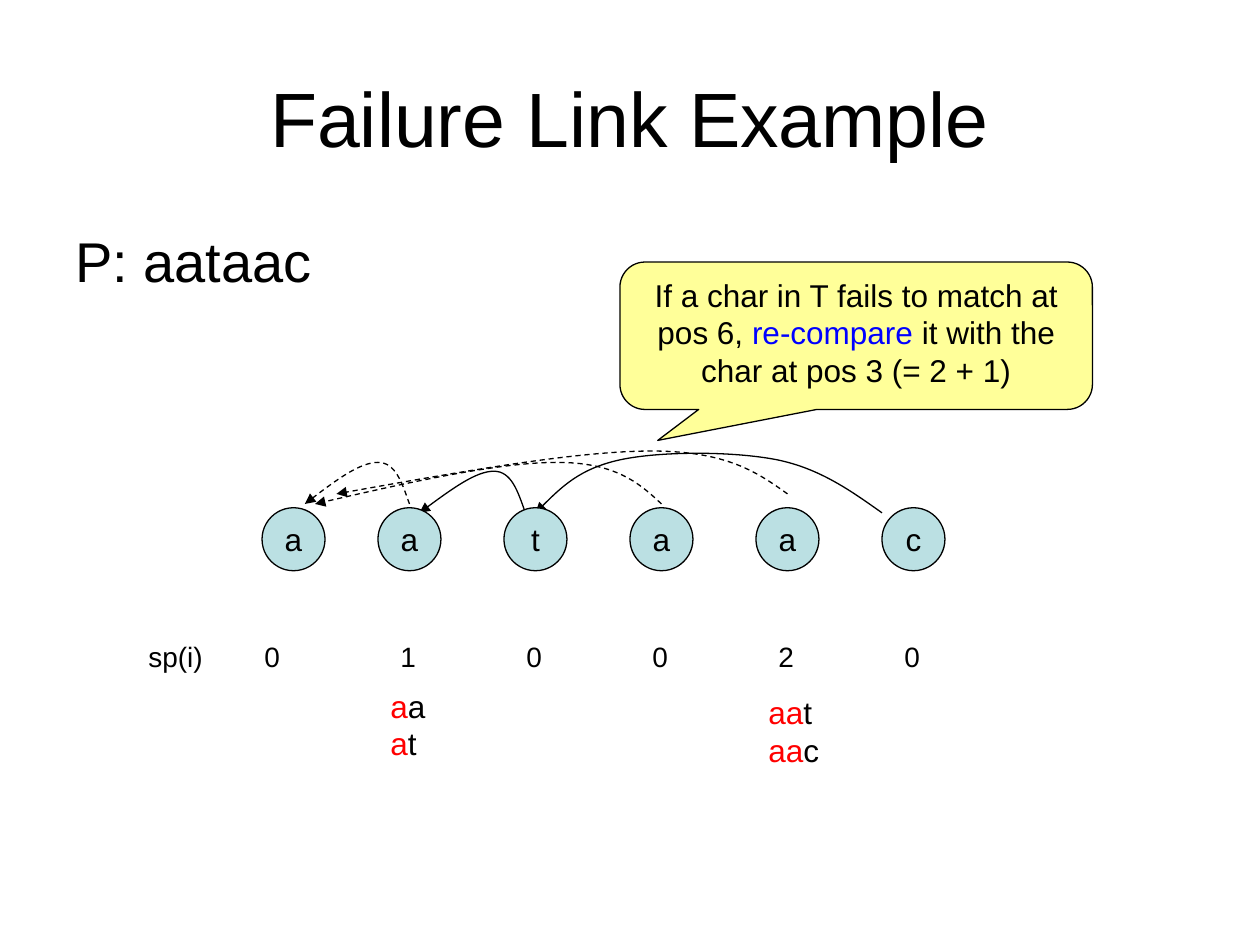
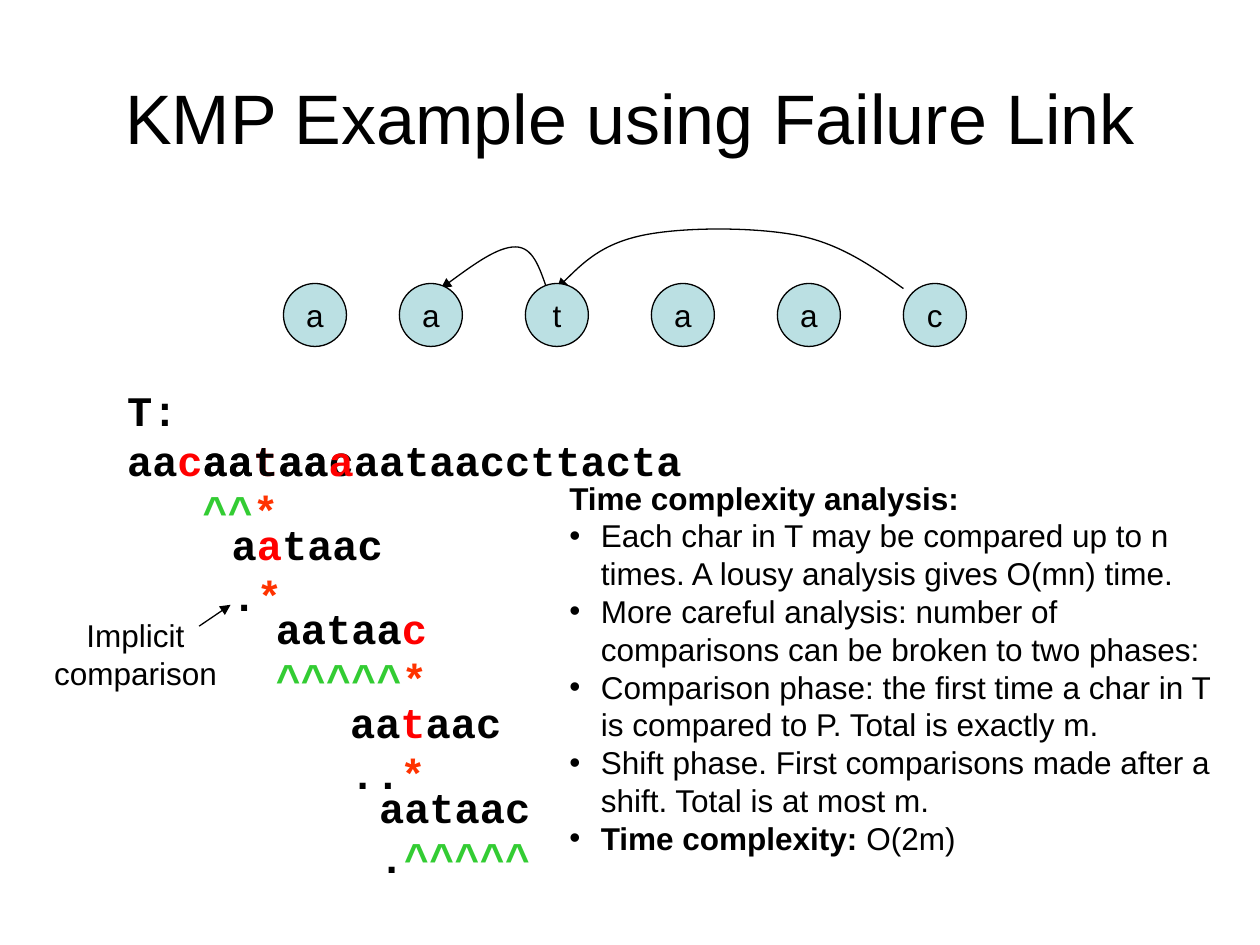
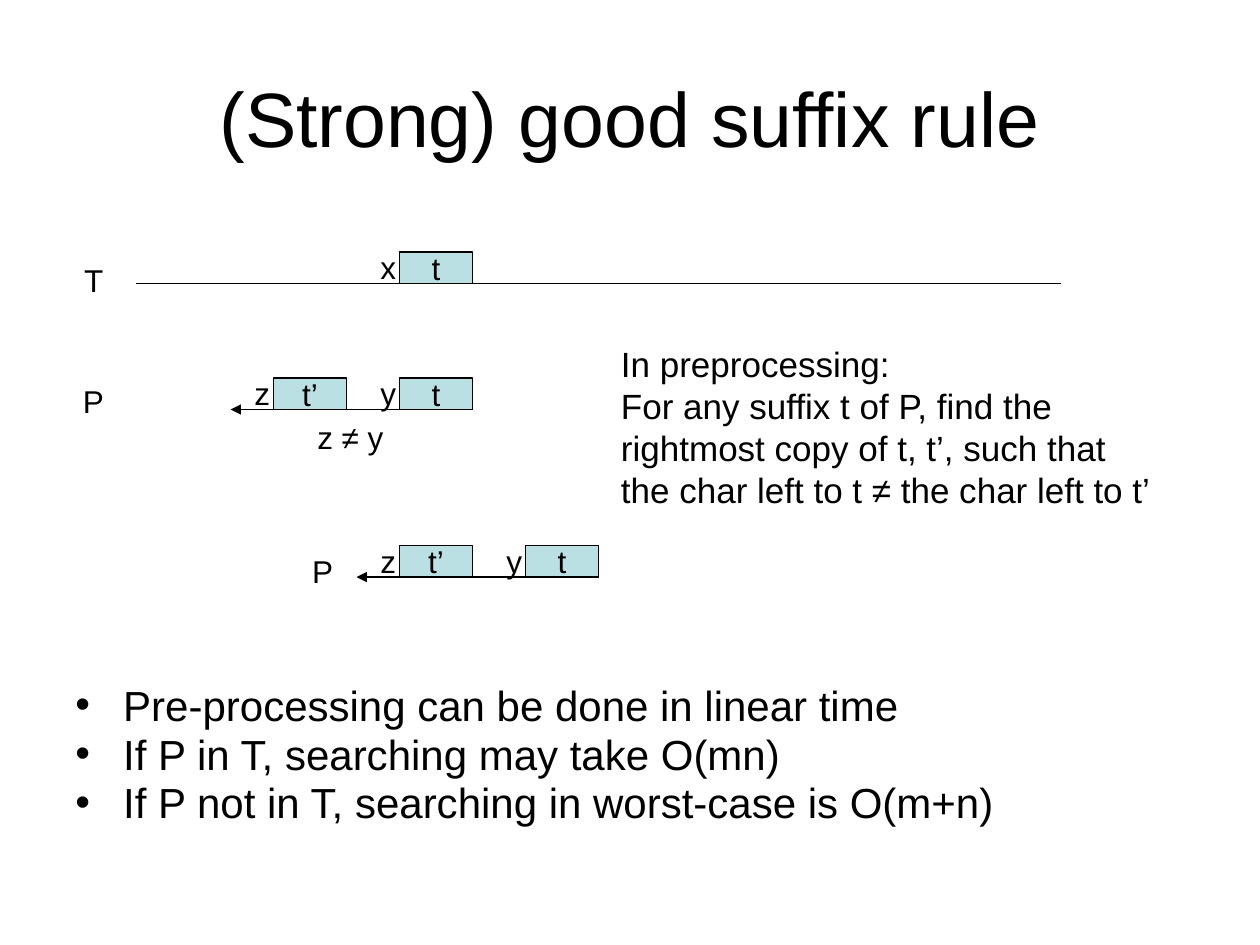
from lxml.etree import SubElement
from pptx import Presentation
from pptx.dml.color import RGBColor as RGB
from pptx.enum.dml import MSO_LINE as Dash
from pptx.enum.shapes import MSO_CONNECTOR as Link, MSO_SHAPE as Kind
from pptx.enum.text import MSO_ANCHOR as Anchor, MSO_AUTO_SIZE as Fit, PP_ALIGN as Align
from pptx.oxml.ns import qn
from pptx.util import Inches, Pt

HUES = {"black": "000000", "red": "FF0000", "star": "FF3300", "green": "33CC33",
        "blue": "0000FF", "teal": "BBE0E3", "yellow": "FFFF99"}


def ink(shape, dash=False, arrow=False):
    """Thin black line without shadow, with an arrowhead at its end if asked."""
    shape.line.color.rgb = RGB.from_string(HUES["black"])
    shape.line.width = Pt(0.75)
    if dash:
        shape.line.dash_style = Dash.DASH
    props = shape.element.spPr
    if arrow:
        SubElement(props.find(qn("a:ln")), qn("a:tailEnd"), type="triangle")
    SubElement(props, qn("a:effectLst"))


def write(slide, at, paras, size=18, font="Arial", align=Align.LEFT, bold=False,
          wrap=True, kind=None, fill="teal", fit=Fit.SHAPE_TO_FIT_TEXT):
    """Text box, or filled shape if a kind is given; a run is (text, hue, bold)."""
    area = [Inches(v) for v in at]
    if kind is None:
        shape = slide.shapes.add_textbox(*area)
        shape.text_frame.auto_size = fit
    else:
        shape = slide.shapes.add_shape(kind, *area)
        shape.fill.solid()
        shape.fill.fore_color.rgb = RGB.from_string(HUES[fill])
        ink(shape)
        align = Align.CENTER
    frame = shape.text_frame
    frame.word_wrap = wrap
    for i, runs in enumerate(paras):
        para = frame.add_paragraph() if i else frame.paragraphs[0]
        para.alignment = align
        for item in [(runs,)] if isinstance(runs, str) else runs:
            words, hue, heavy = (*item, *("black", bold)[len(item) - 1:])
            if words == "\n":
                para.add_line_break()
                continue
            run = para.add_run()
            run.text = words
            run.font.name, run.font.size, run.font.bold = font, Pt(size), heavy
            run.font.color.rgb = RGB.from_string(HUES[hue])
    return shape


# Slides and titles
deck = Presentation()
deck.slide_width, deck.slide_height = Inches(10), Inches(7.5)
slides = []
for words, size in (("Failure Link Example", 44),
                    ("KMP Example using Failure Link", 40),
                    ("(Strong) good suffix rule", 44)):
    slide = deck.slides.add_slide(deck.slide_layouts[5])
    title = slide.shapes.title
    title.left, title.top = Inches(0.5), Inches(0.3)
    title.width, title.height = Inches(9), Inches(1.25)
    title.text_frame.vertical_anchor = Anchor.MIDDLE
    para = title.text_frame.paragraphs[0]
    para.alignment = Align.CENTER
    run = para.add_run()
    run.text = words
    run.font.name, run.font.size = "Arial", Pt(size)
    run.font.color.rgb = RGB.from_string(HUES["black"])
    slides.append(slide)
fail, match, rule = slides

# Slide 1: pattern
lead = write(fail, (0.5, 1.75, 9, 4.95), ["P: aataac"], 32, fit=Fit.NONE)
lead.text_frame.paragraphs[0].space_before = Pt(6.4)

# Failure links: Bezier curves, three points for each piece after the start
solid = [
    [(4.17, 4.07), (4.11, 3.9), (4.06, 3.74), (3.92, 3.74),
     (3.78, 3.74), (3.56, 3.9), (3.33, 4.07)],
    [(7, 4.07), (6.76, 3.9), (6.51, 3.72), (6.17, 3.65), (5.82, 3.58),
     (5.24, 3.58), (4.92, 3.65), (4.6, 3.72), (4.42, 3.9), (4.25, 4.07)],
]
dashed = [
    [(3.25, 4), (3.19, 3.83), (3.14, 3.67), (3, 3.67),
     (2.86, 3.67), (2.64, 3.83), (2.42, 4)],
    [(5.25, 4), (5.07, 3.83), (4.88, 3.67), (4.42, 3.67),
     (3.97, 3.67), (3.23, 3.83), (2.5, 4)],
    [(6.25, 3.92), (6.01, 3.75), (5.77, 3.58), (5.17, 3.58),
     (4.58, 3.58), (3.62, 3.75), (2.67, 3.92)],
]
for slide, dx, dy, arcs, nodes in ((fail, 0, 0, solid, "aataac"),
                                   (match, 0.17, -1.78, solid, "aataac"),
                                   (fail, 0, 0, dashed, "")):
    for arc in arcs:
        spots = [(Inches(x + dx), Inches(y + dy)) for x, y in arc]
        pen = slide.shapes.build_freeform(*spots[0])
        pen.add_line_segments(spots[1:], close=False)
        curve = pen.convert_to_shape()
        # Join each three straight pieces into one curve
        trace = next(curve.element.iter(qn("a:path")))
        for i, leg in enumerate(trace.findall(qn("a:lnTo"))):
            if i % 3 == 0:
                bend = SubElement(trace, qn("a:cubicBezTo"))
            bend.append(leg[0])
            trace.remove(leg)
        curve.fill.background()
        ink(curve, arcs is dashed, True)
    for x, char in zip((2.08, 3, 4, 5, 6, 7), nodes):
        write(slide, (x + dx, 4.03 + dy, 0.5, 0.5), [char], wrap=False, kind=Kind.OVAL)

# Slide 1: sp values and callout
row = write(fail, (1.08, 5.03, 6.42, 0.37), ["sp(i)\t0\t1\t0\t0\t2\t0"], 16)
tabs = SubElement(row.text_frame.paragraphs[0]._p.get_or_add_pPr(), qn("a:tabLst"))
for stop in (0.92, 2, 3, 4, 5, 6):
    SubElement(tabs, qn("a:tab"), pos=str(Inches(stop)), algn="l")
for at, same, ends in (((3, 5.4, 0.5, 0.7), "a", "at"),
                       ((6, 5.45, 0.75, 0.7), "aa", "tc")):
    write(fail, at, [[(same, "red"), (ends[0],), ("\n",), (same, "red"), (ends[1],)]])
note = write(fail, (4.92, 2.08, 3.75, 1.17),
             [[("If a char in T fails to match at pos 6, ",), ("re-compare", "blue"),
               (" it with the char at pos 3 (= 2 + 1)",)]],
             kind=Kind.ROUNDED_RECTANGULAR_CALLOUT, fill="yellow")
note.text_frame.vertical_anchor = Anchor.TOP
for i, value in enumerate((-0.42, 0.71, 0.17)):
    note.adjustments[i] = value

# Slide 2: text and shifted patterns, with the failing place and the marks
mono = {"size": 24, "font": "Courier New", "bold": True}
word = "aataac"
for x, y, bad, marks in (
        (1.51, 3.4, 2, [("^^", "green"), ("*", "star")]),
        (1.74, 4.07, 1, [(".",), ("*", "star")]),
        (2.09, 4.73, 5, [("^^^^^", "green"), ("*", "star")]),
        (2.68, 5.48, 2, [("..",), ("*", "star")]),
        (2.91, 6.15, 6, [(".",), ("^^^^^", "green")])):
    runs = [(word[:bad],), (word[bad:bad + 1], "red"), (word[bad + 1:],)]
    write(match, (x, y, 1.41, 0.9), [[r for r in runs if r[0]], marks], **mono)
    if y == 3.4:
        write(match, (0.91, 3, 5.18, 0.5),
              [[("T: aa",), ("c", "red"), ("aataa",), ("a", "red"), ("aataaccttacta",)]],
              **mono)

# Slide 2: analysis and pointer label
study = write(match, (4.42, 3.75, 5.42, 3.1), [
    [("Time complexity analysis:", "black", True)],
    "Each char in T may be compared up to n times. A lousy analysis gives O(mn) time.",
    "More careful analysis: number of comparisons can be broken to two phases:",
    "Comparison phase: the first time a char in T is compared to P. Total is exactly m.",
    "Shift phase. First comparisons made after a shift. Total is at most m.",
    [("Time complexity:", "black", True), (" O(2m)",)]])
write(match, (0.33, 4.84, 1.49, 0.7), ["Implicit", "comparison"],
      align=Align.CENTER, wrap=False)

# Slide 3: closing points
points = write(rule, (0.5, 5.42, 9, 1.28), [
    "Pre-processing can be done in linear time",
    "If P in T, searching may take O(mn)",
    "If P not in T, searching in worst-case is O(m+n)"], 24, fit=Fit.NONE)
for para in points.text_frame.paragraphs:
    para.line_spacing, para.space_before = 0.8, Pt(4.8)

# Hanging indents, with bullets from the given paragraph on
for box, gap, first in ((lead, 0.38, 1), (study, 0.25, 1), (points, 0.38, 0)):
    for i, para in enumerate(box.text_frame.paragraphs):
        props = para._p.get_or_add_pPr()
        props.set("marL", str(Inches(gap)))
        props.set("indent", str(-Inches(gap)))
        if i >= first:
            SubElement(props, qn("a:buFont"), typeface="Arial")
            SubElement(props, qn("a:buChar"), char="•")

# Straight lines
for slide, x1, y1, x2, y2, arrow in ((match, 1.58, 4.97, 1.83, 4.8, True),
                                     (rule, 1.08, 2.25, 8.42, 2.25, False),
                                     (rule, 3.75, 3.25, 1.83, 3.25, True),
                                     (rule, 4.75, 4.58, 2.83, 4.58, True)):
    line = slide.shapes.add_connector(Link.STRAIGHT, *map(Inches, (x1, y1, x2, y2)))
    ink(line, arrow=arrow)

# Slide 3: blocks, each with the char to its left
for x, y, block, char in ((3.17, 2, "t", "x"), (3.17, 3, "t", "y"), (2.17, 3, "t’", "z"),
                          (4.17, 4.33, "t", "y"), (3.17, 4.33, "t’", "z")):
    write(rule, (x, y, 0.58, 0.25), [block], wrap=False, kind=Kind.RECTANGLE)
    write(rule, (x - 0.25, y - 0.08, 0.33, 0.4), [char], wrap=False)

# Slide 3: explanation and labels
write(rule, (4.83, 2.67, 4.5, 1.43), [
    "In preprocessing:",
    "For any suffix t of P, find the rightmost copy of t, t’, such that "
    "the char left to t ≠ the char left to t’"], 20)
for x, y, wide, label in ((0.57, 2.02, 0.35, "T"), (0.56, 2.98, 0.37, "P"),
                          (2.38, 4.33, 0.37, "P"), (2.42, 3.27, 0.73, "z ≠ y")):
    write(rule, (x, y, wide, 0.4), [label], wrap=False)

deck.save("out.pptx")
